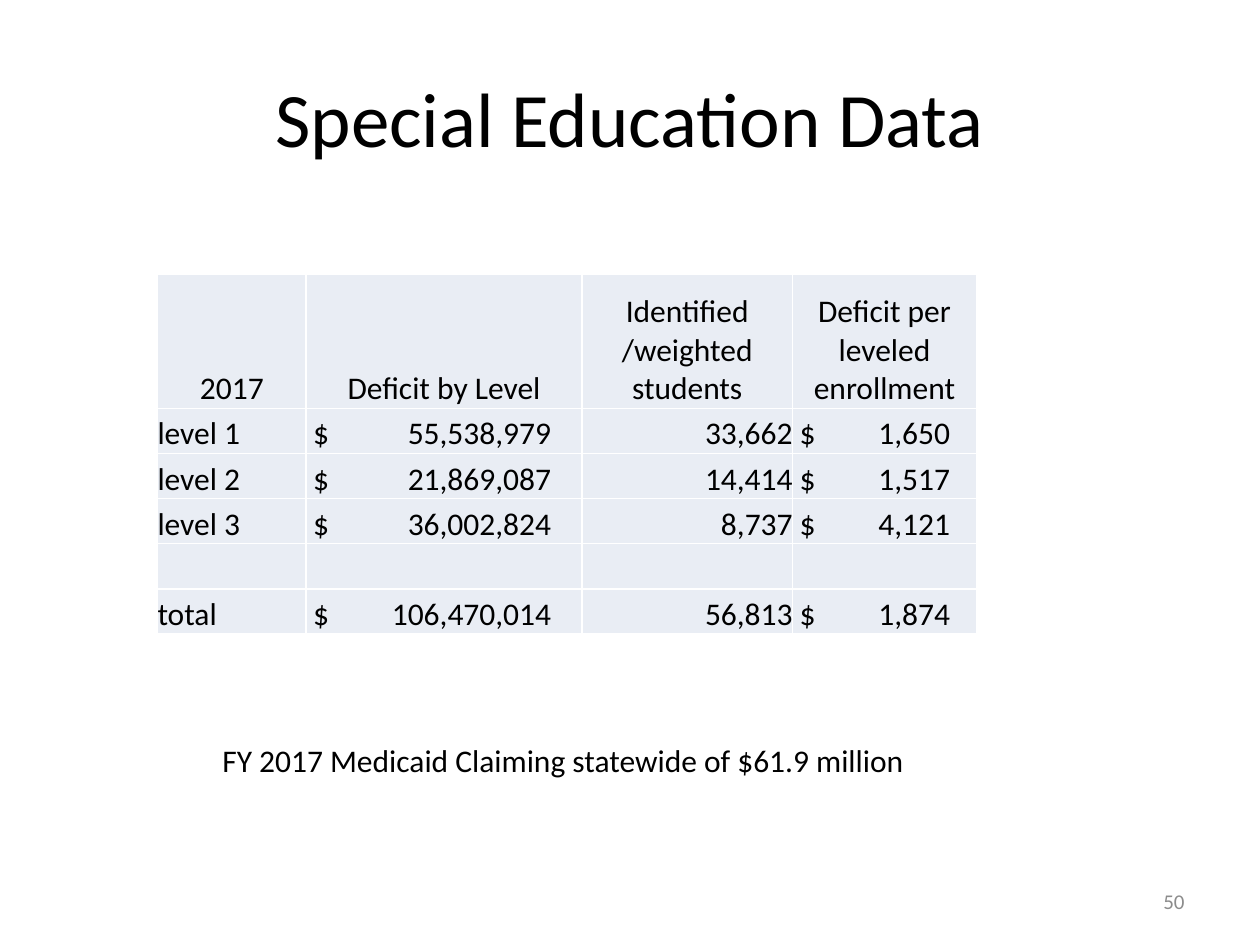
from lxml import etree
from pptx import Presentation
from pptx.dml.color import RGBColor
from pptx.enum.text import MSO_ANCHOR, PP_ALIGN
from pptx.oxml.ns import qn
from pptx.util import Pt

BLACK = RGBColor(0, 0, 0)
GREY = RGBColor(0x8C, 0x8C, 0x8C)
PALE = RGBColor(0xE9, 0xED, 0xF4)
LEFT, CENTER, RIGHT = PP_ALIGN.LEFT, PP_ALIGN.CENTER, PP_ALIGN.RIGHT
TOP, MIDDLE, BOTTOM = MSO_ANCHOR.TOP, MSO_ANCHOR.MIDDLE, MSO_ANCHOR.BOTTOM


def write(frame, text, size, align, color=BLACK):
    para = frame.paragraphs[0]
    para.alignment = align
    run = para.add_run()
    run.text = text
    run.font.name = "Calibri"
    run.font.size = Pt(size)
    run.font.color.rgb = color
    return para


def edge(cell):
    props = cell._tc.get_or_add_tcPr()
    for side in ("a:lnL", "a:lnR", "a:lnT", "a:lnB"):
        line = etree.SubElement(props, qn(side), w=str(Pt(1)))
        fill = etree.SubElement(line, qn("a:solidFill"))
        etree.SubElement(fill, qn("a:srgbClr"), val="FFFFFF")


deck = Presentation()
deck.slide_width, deck.slide_height = Pt(720), Pt(540)
slide = deck.slides.add_slide(deck.slide_layouts[6])

labels = [
    ((36, 21.6, 648, 90), "Special Education Data", 44, CENTER, MIDDLE, BLACK),
    ((516, 500.5, 168, 28.75), "50", 12, RIGHT, MIDDLE, GREY),
    ((120, 420, 462, 29), "FY 2017 Medicaid Claiming statewide of $61.9 million",
     18, LEFT, TOP, BLACK),
]
for box, text, size, align, anchor, color in labels:
    frame = slide.shapes.add_textbox(*map(Pt, box)).text_frame
    frame.word_wrap = True
    frame.vertical_anchor = anchor
    write(frame, text, size, align, color)

rows = [
    ("2017", "Deficit by Level", "Identified /weighted students",
     "Deficit per leveled enrollment"),
    ("level 1", "$\t55,538,979", "33,662", "$\t1,650"),
    ("level 2", "$\t21,869,087", "14,414", "$\t1,517"),
    ("level 3", "$\t36,002,824", "8,737", "$\t4,121"),
    ("", "", "", ""),
    ("total", "$\t106,470,014", "56,813", "$\t1,874"),
]
widths = [85, 157.5, 120.5, 105]
heights = [76.8] + [25.8] * 5
aligns = [LEFT, LEFT, RIGHT, LEFT]
stops = {1: 136, 3: 86}

table = slide.shapes.add_table(
    len(rows), len(widths), Pt(90), Pt(156.5), Pt(sum(widths)), Pt(sum(heights))
).table
table.first_row = table.horz_banding = False
for col, width in zip(table.columns, widths):
    col.width = Pt(width)
for row, height in zip(table.rows, heights):
    row.height = Pt(height)

for r, texts in enumerate(rows):
    for c, text in enumerate(texts):
        cell = table.cell(r, c)
        money = "\t" in text
        cell.margin_left = Pt(4 if money else 0)
        cell.margin_right = cell.margin_top = cell.margin_bottom = 0
        cell.vertical_anchor = BOTTOM
        edge(cell)
        cell.fill.solid()
        cell.fill.fore_color.rgb = PALE
        if text:
            para = write(cell.text_frame, text, 18, aligns[c] if r else CENTER)
            if money:
                tabs = etree.SubElement(para._p.get_or_add_pPr(), qn("a:tabLst"))
                etree.SubElement(tabs, qn("a:tab"), pos=str(Pt(stops[c])), algn="r")

deck.save("out.pptx")
